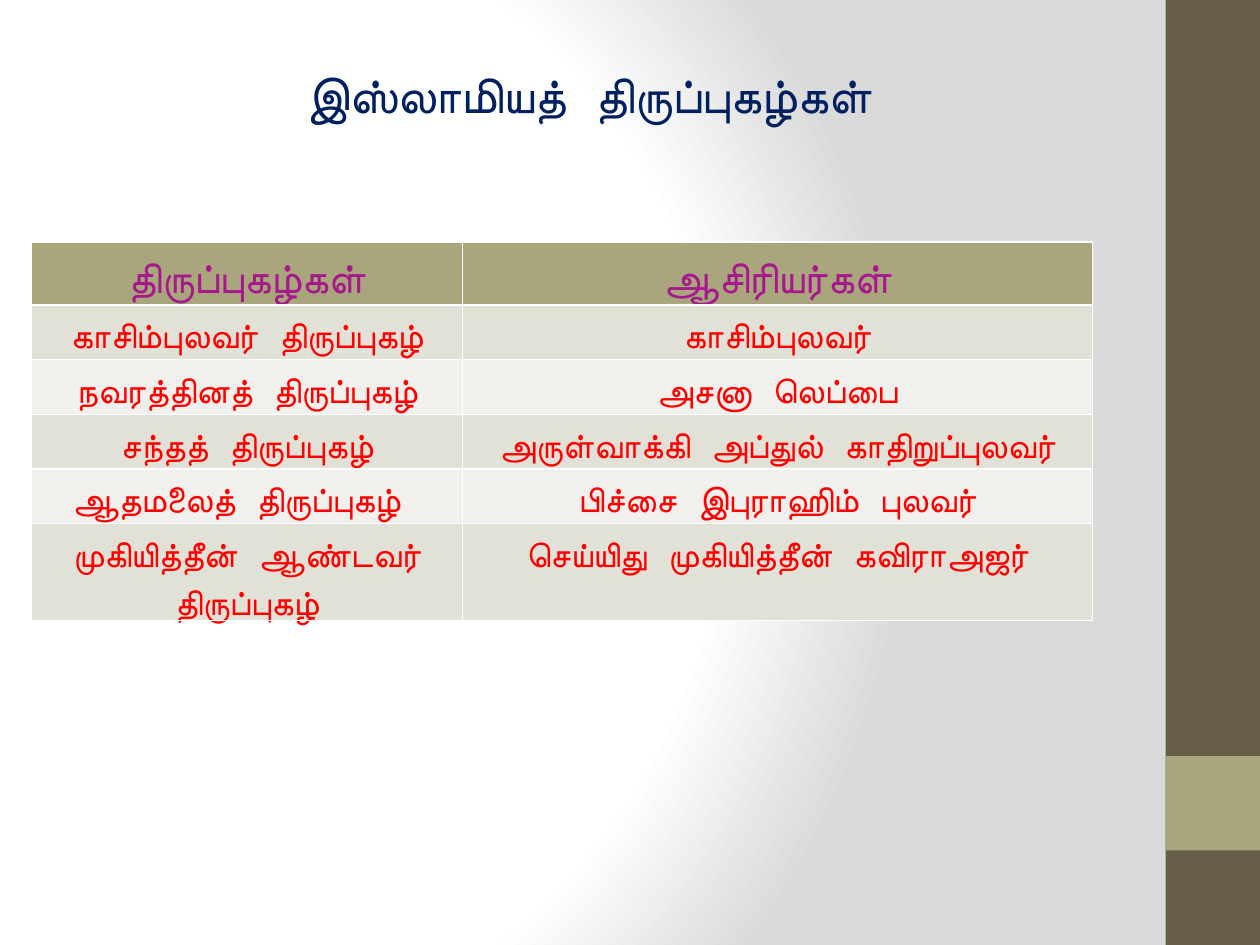
import pptx
import pptx.dml.color
import pptx.enum.shapes
import pptx.enum.text
import pptx.oxml
import pptx.oxml.ns
import pptx.util

RGB = pptx.dml.color.RGBColor
BROWN = RGB(0x67, 0x5E, 0x47)
OLIVE = RGB(0xA9, 0xA5, 0x7C)
BAND = RGB(0xE2, 0xE1, 0xD7)
PALE = RGB(0xF1, 0xF0, 0xEC)
NAVY = RGB(0x00, 0x20, 0x60)
PURPLE = RGB(0xA8, 0x18, 0x8D)
RED = RGB(0xFF, 0x00, 0x00)
WHITE = RGB(0xFF, 0xFF, 0xFF)
GREY = RGB(0xDA, 0xDA, 0xDA)

TITLE = {"size": pptx.util.Pt(28), "bold": True, "color": NAVY}
HEADER = {"size": pptx.util.Pt(24), "bold": True, "color": PURPLE}
BODY = {"size": pptx.util.Pt(20), "bold": False, "color": RED}

ROWS = [
    ("திருப்புகழ்கள்", "ஆசிரியர்கள்"),
    ("காசிம்புலவர் திருப்புகழ்", "காசிம்புலவர்"),
    ("நவரத்தினத் திருப்புகழ்", "அசனா லெப்பை"),
    ("சந்தத் திருப்புகழ்", "அருள்வாக்கி அப்துல் காதிறுப்புலவர்"),
    ("ஆதமலைத் திருப்புகழ் ", "பிச்சை இபுராஹிம் புலவர்"),
    ("முகியித்தீன் ஆண்டவர் திருப்புகழ்", "செய்யிது முகியித்தீன் கவிராஅஜர்"),
]


class Deck:
    """Draws on one slide with a grid of 40 columns by 30 rows."""

    font = "Noto Sans Mono"
    unit = pptx.util.Inches(0.25)

    def __init__(self, prs):
        self.s = prs.slides.add_slide(prs.slide_layouts[6])

    def grid(self, *cells):
        return [round(c * self.unit) for c in cells]

    def background(self, stops, **focus):
        self.s.background.fill.solid()
        solid = self.s._element.find(".//" + pptx.oxml.ns.qn("a:solidFill"))
        gs = "".join(f'<a:gs pos="{pos * 1000}"><a:srgbClr val="{color}"/></a:gs>'
                     for pos, color in stops)
        rect = " ".join(f'{side}="{share * 1000}"' for side, share in focus.items())
        grad = pptx.oxml.parse_xml(
            f'<a:gradFill {pptx.oxml.ns.nsdecls("a")} rotWithShape="1"><a:gsLst>{gs}</a:gsLst>'
            f'<a:path path="circle"><a:fillToRect {rect}/></a:path></a:gradFill>')
        solid.getparent().replace(solid, grad)

    def block(self, color, *box):
        sp = self.s.shapes.add_shape(pptx.enum.shapes.MSO_SHAPE.RECTANGLE, *self.grid(*box))
        sp.shadow.inherit = False
        sp.fill.solid()
        sp.fill.fore_color.rgb = color
        sp.line.fill.background()

    def fill_text(self, tf, text, style):
        p = tf.paragraphs[0]
        p.alignment = pptx.enum.text.PP_ALIGN.CENTER
        r = p.add_run()
        r.text = text
        for name, value in style.items():
            if name == "color":
                r.font.color.rgb = value
            else:
                setattr(r.font, name, value)
        r.font.name = self.font
        cs = pptx.oxml.parse_xml(
            f'<a:cs {pptx.oxml.ns.nsdecls("a")} typeface="{self.font}"/>')
        r.font._element.append(cs)

    def text(self, text, style, *box):
        tf = self.s.shapes.add_textbox(*self.grid(*box)).text_frame
        tf.word_wrap = True
        tf.auto_size = pptx.enum.text.MSO_AUTO_SIZE.SHAPE_TO_FIT_TEXT
        self.fill_text(tf, text, style)

    def table(self, rows, left, top, widths, heights):
        box = self.grid(left, top, sum(widths), sum(heights))
        table = self.s.shapes.add_table(len(rows), len(widths), *box).table
        for column, width in zip(table.columns, self.grid(*widths)):
            column.width = width
        for i, (row, height) in enumerate(zip(table.rows, self.grid(*heights))):
            row.height = height
            fill = OLIVE if i == 0 else BAND if i % 2 else PALE
            for cell, text in zip(row.cells, rows[i]):
                cell.fill.solid()
                cell.fill.fore_color.rgb = fill
                self.fill_text(cell.text_frame, text, HEADER if i == 0 else BODY)


def main():
    prs = pptx.Presentation()
    prs.slide_width, prs.slide_height = pptx.util.Inches(10), pptx.util.Inches(7.5)
    deck = Deck(prs)
    deck.background([(0, WHITE), (75, WHITE), (100, GREY)], l=20, t=50, r=100, b=50)
    deck.block(BROWN, 37, 0, 3, 30)
    deck.block(OLIVE, 37, 24, 3, 3)
    deck.text("இஸ்லாமியத் திருப்புகழ்கள்", TITLE, 7.04, 1.84, 23.32, 2.28)
    deck.table(ROWS, 1, 7.68, [13.68, 20], [2] + [1.73] * 4 + [3.08])
    prs.save("out.pptx")


if __name__ == "__main__":
    main()
